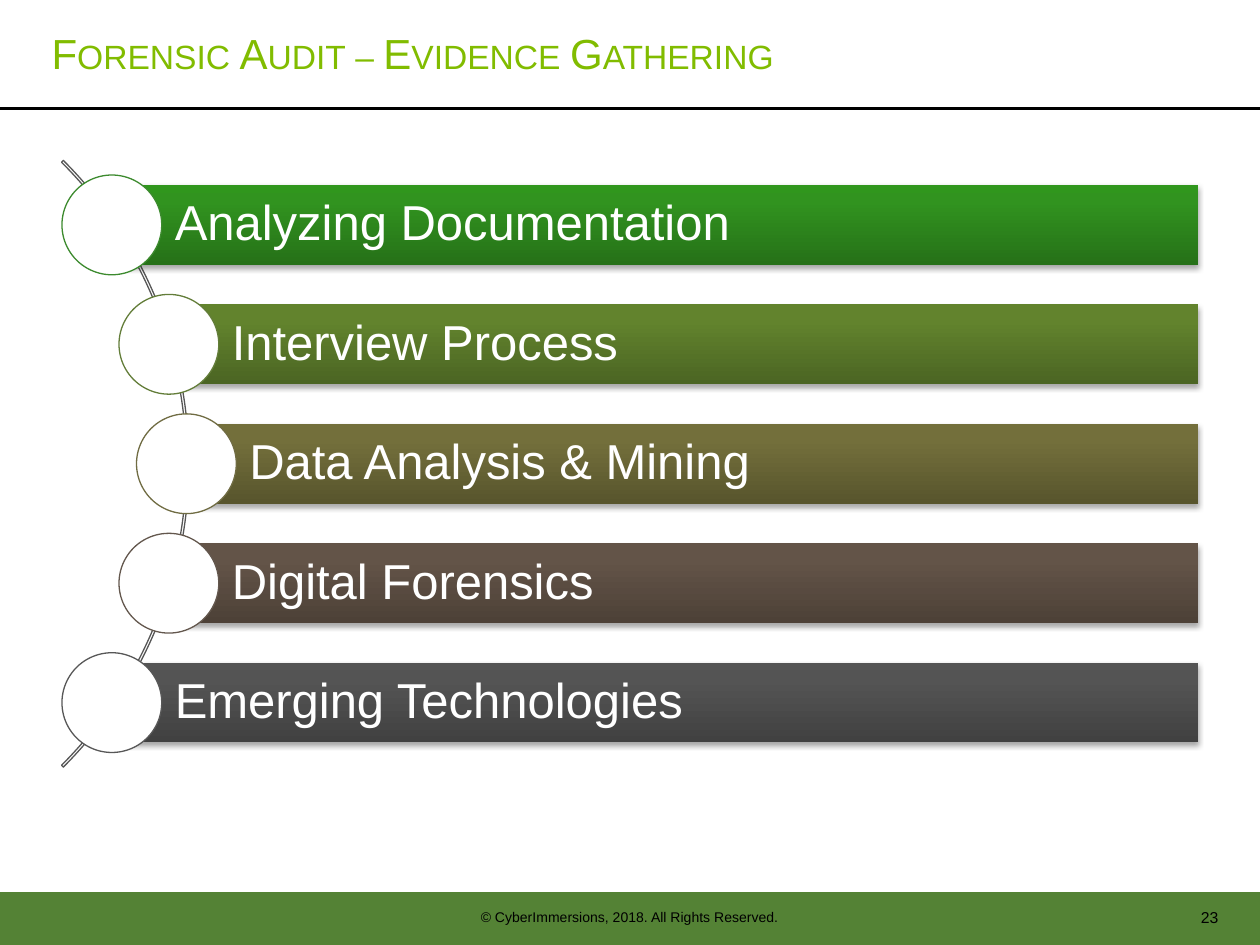
from typing import NamedTuple

from lxml.etree import SubElement as Sub
from pptx import Presentation
from pptx.dml.color import RGBColor as Rgb
from pptx.enum.shapes import MSO_CONNECTOR as Conn, MSO_SHAPE as Kind
from pptx.enum.text import MSO_ANCHOR as Anchor, PP_ALIGN as Align
from pptx.oxml import parse_xml
from pptx.oxml.ns import nsdecls, qn
from pptx.util import Pt

HEX = {
    "white": "FFFFFF",
    "black": "000000",
    "title": "81BC00",
    "foot": "548235",
    "arc": "575757",
}
FONT = "Arial"
WIDE, HIGH = 720, 540
RIGHT = 684.7
FIRST, STEP = 128.5, 68.25
BAR, DISC = 45.5, 57
ARC = 490.3


class Step(NamedTuple):
    text: str
    left: float
    low: str
    mid: str
    top: str
    ring: str


STEPS = [
    Step("Analyzing Documentation", 63.9, "267118", "31931F", "30961D", "3C8A2E"),
    Step("Interview Process", 96.5, "4B6523", "62832D", "63852C", "637D39"),
    Step("Data Analysis & Mining", 106.5, "58552D", "736F3B", "75703A", "706C43"),
    Step("Digital Forensics", 96.5, "4D4137", "635448", "645547", "63574D"),
    Step("Emerging Technologies", 63.9, "414141", "545454", "555555", "575757"),
]


def add_shape(slide, kind: Kind, x: float, y: float, w: float, h: float):
    shape = slide.shapes.add_shape(kind, Pt(x), Pt(y), Pt(w), Pt(h))
    shape.line.fill.background()
    return shape


def fill_flat(shape, tone: str) -> None:
    shape.shadow.inherit = False
    shape.fill.solid()
    shape.fill.fore_color.rgb = Rgb.from_string(tone)


def set_line(shape, tone: str, width: float) -> None:
    shape.line.color.rgb = Rgb.from_string(tone)
    shape.line.width = Pt(width)


def set_text(shape, text: str, size: float, tone: str, align: Align,
             anchor: Anchor, pads: tuple):
    frame = shape.text_frame
    frame.word_wrap = True
    frame.vertical_anchor = anchor
    (frame.margin_left, frame.margin_top,
     frame.margin_right, frame.margin_bottom) = map(Pt, pads)
    para = frame.paragraphs[0]
    para.text = text
    para.alignment = align
    para.font.name = FONT
    para.font.size = Pt(size)
    para.font.color.rgb = Rgb.from_string(tone)
    return para


def add_label(slide, box: tuple, text: str, size: float, tone: str,
              align: Align, anchor: Anchor, pads: tuple = (0, 0, 0, 0)):
    label = slide.shapes.add_textbox(*map(Pt, box))
    return set_text(label, text, size, tone, align, anchor, pads)


def shade_bar(bar, step: Step) -> None:
    stops = "".join(
        f'<a:gs pos="{pos}"><a:srgbClr val="{tone}"/></a:gs>'
        for pos, tone in ((0, step.low), (80000, step.mid), (100000, step.top))
    )
    props = bar._element.spPr
    props.find(qn("a:prstGeom")).addnext(parse_xml(
        f'<a:gradFill {nsdecls("a")} rotWithShape="1"><a:gsLst>{stops}</a:gsLst>'
        '<a:lin ang="16200000" scaled="0"/></a:gradFill>'
    ))
    props.append(parse_xml(
        f'<a:effectLst {nsdecls("a")}><a:outerShdw blurRad="{Pt(3.1)}" '
        f'dist="{Pt(1.8)}" dir="5400000" rotWithShape="0">'
        f'<a:srgbClr val="{HEX["black"]}"><a:alpha val="35000"/></a:srgbClr>'
        '</a:outerShdw></a:effectLst>'
    ))


def draw_step(slide, step: Step, mid: float) -> None:
    bar = add_shape(slide, Kind.RECTANGLE, step.left, mid - BAR / 2,
                    RIGHT - step.left, BAR)
    shade_bar(bar, step)
    para = set_text(bar, step.text, 28, HEX["white"], Align.LEFT,
                    Anchor.MIDDLE, (36, 5.6, 5.6, 5.6))
    para.line_spacing = 0.9
    disc = add_shape(slide, Kind.OVAL, step.left - DISC / 2, mid - DISC / 2,
                     DISC, DISC)
    fill_flat(disc, HEX["white"])
    set_line(disc, step.ring, 0.75)


def draw_frame(slide) -> None:
    foot = add_shape(slide, Kind.RECTANGLE, 0, 509.8, WIDE, HIGH - 509.8)
    fill_flat(foot, HEX["foot"])
    rule = slide.shapes.add_connector(Conn.STRAIGHT, 0, Pt(61.9), Pt(WIDE), Pt(61.9))
    set_line(rule, HEX["black"], 1.5)
    Sub(rule._element.spPr, qn("a:effectLst"))
    add_label(slide, (260.6, 515.5, 198.7, 17), "© CyberImmersions, 2018. All Rights Reserved.",
              8, HEX["black"], Align.CENTER, Anchor.TOP, (7.2, 3.6, 7.2, 3.6))
    title = add_label(slide, (29.5, 16, 571.7, 36.7), "Forensic Audit – Evidence Gathering",
                      24, HEX["title"], Align.LEFT, Anchor.TOP)
    title._p.pPr.find(qn("a:defRPr")).set("cap", "small")
    add_label(slide, (633.6, 514.1, 62.6, 20.2), "23", 9, HEX["black"],
              Align.RIGHT, Anchor.MIDDLE)


def draw_arc(slide) -> None:
    mid = FIRST + 2 * STEP
    arc = add_shape(slide, Kind.BLOCK_ARC, -382.3, mid - ARC / 2, ARC, ARC)
    arc.shadow.inherit = False
    arc.fill.background()
    set_line(arc, HEX["arc"], 0.75)
    for i, value in enumerate((189, 27, 0.003)):
        arc.adjustments[i] = value


def main() -> None:
    deck = Presentation()
    deck.slide_width, deck.slide_height = Pt(WIDE), Pt(HIGH)
    slide = deck.slides.add_slide(deck.slide_layouts[6])
    draw_frame(slide)
    draw_arc(slide)
    for i, step in enumerate(STEPS):
        draw_step(slide, step, FIRST + i * STEP)
    deck.save("out.pptx")


if __name__ == "__main__":
    main()
